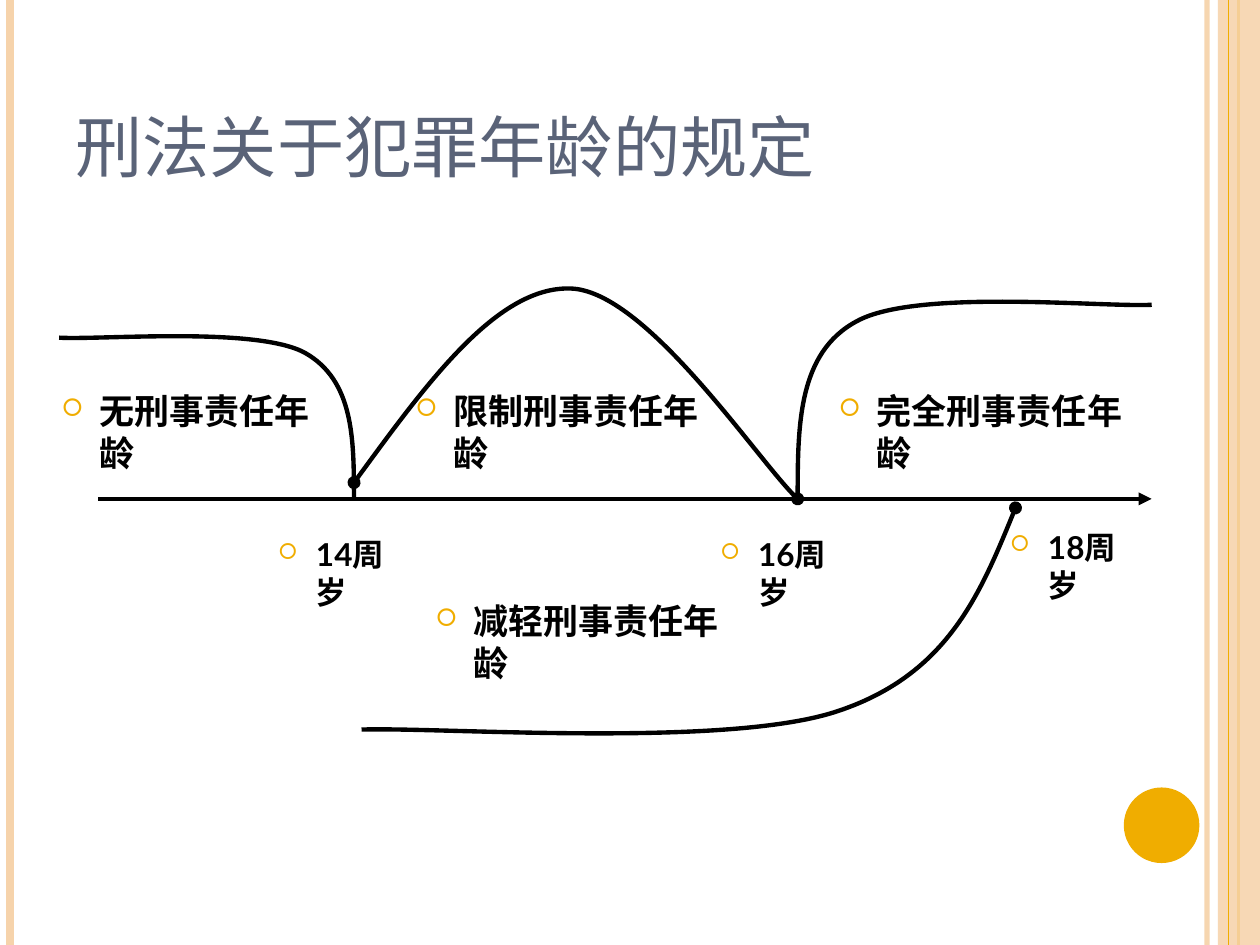
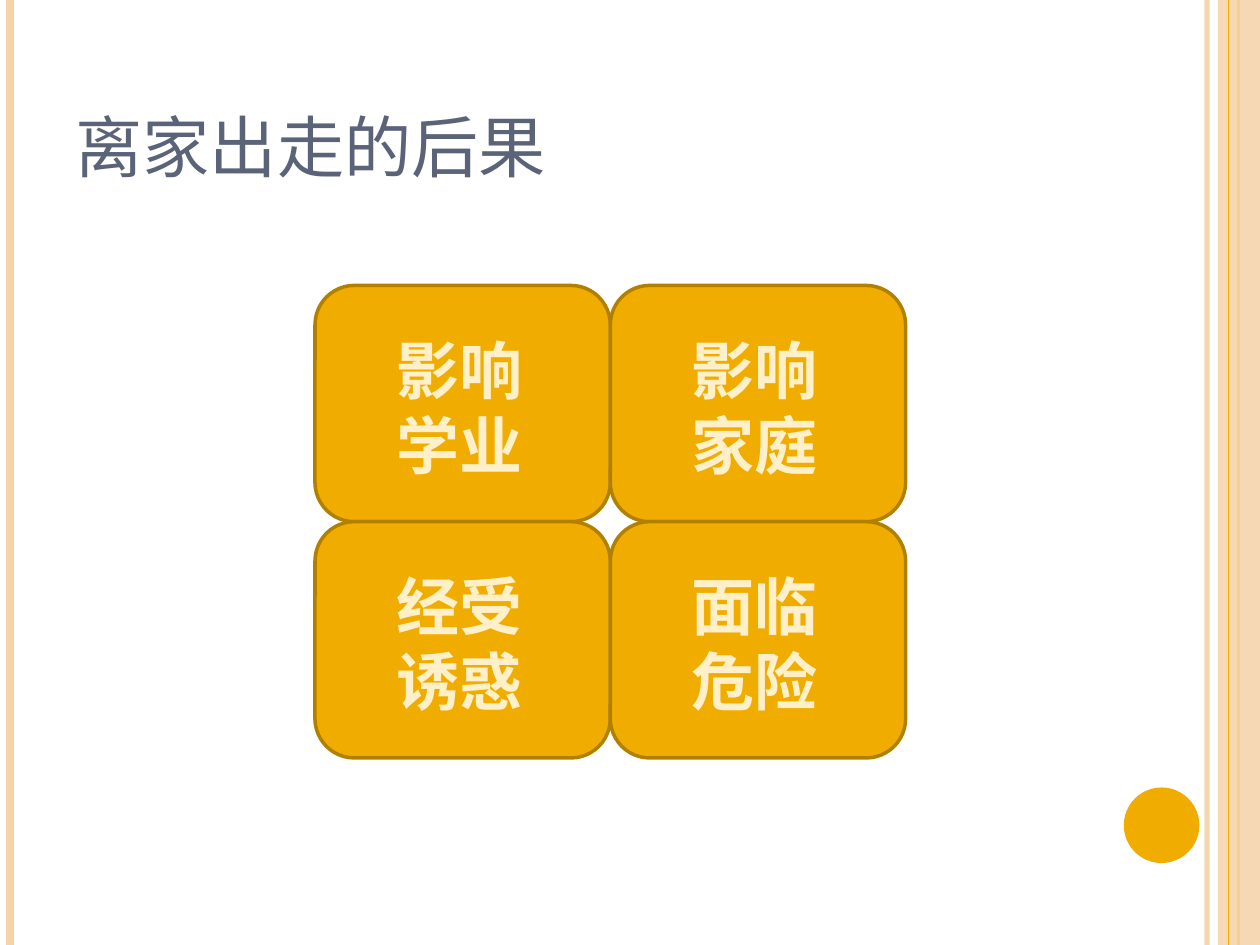
"""Build two law lesson slides: ages of criminal duty and the results of leaving home."""
from lxml import etree
from pptx import Presentation
from pptx import util as u
from pptx.dml.color import RGBColor
from pptx.enum import shapes, text
from pptx.oxml.ns import qn

PEACH = RGBColor(0xF6, 0xD3, 0xAB)
GOLD = RGBColor(0xF0, 0xAD, 0x00)
BROWN = RGBColor(0xB2, 0x80, 0x00)
CREAM = RGBColor(0xFF, 0xF0, 0xC9)
SLATE = RGBColor(0x5A, 0x63, 0x78)
BLACK = RGBColor(0, 0, 0)

LATIN = "Lato"
HEAD_FONT = "Noto Sans CJK JP"
CARD_FONT = "Noto Sans CJK SC"
WIDE, HIGH = 720, 540

RULES = [(689.8, PEACH, 3, 93), (5.8, PEACH, 4.5, 100), (707.8, GOLD, 1.5, 100)]

CURVES = [
    ([(580.3, 290.2), (560.9, 337.7), (541.4, 385.2), (479.5, 406.1),
      (416.9, 427.7), (252, 415.4), (206.6, 416.9)], "oval", None),
    ([(202.3, 285.1), (202.3, 251.3), (202.3, 217.4), (174.2, 201.6),
      (146.2, 186.5), (57.6, 194.4), (33.8, 193)], None, None),
    ([(455.8, 285.1), (455.8, 243.4), (455.8, 201.6), (489.6, 183.6),
      (523.4, 164.9), (630, 175.7), (658.1, 174.2)], None, None),
    ([(202.3, 275.8), (243.4, 219.6), (284.4, 163.4), (326.2, 164.9),
      (368.6, 166.3), (434.2, 265), (455.8, 285.1)], "oval", "oval"),
]

LABELS = [
    ("14周岁", 151.9, 302.4, 84.2, 18),
    ("16周岁", 404.6, 302.4, 84.2, 18),
    ("18周岁", 570.2, 298.1, 79.2, 18),
    ("无刑事责任年龄", 28.1, 218.9, 157.7, 20),
    ("完全刑事责任年龄", 472.3, 218.9, 185.8, 20),
    ("限制刑事责任年龄", 230.4, 218.9, 185.8, 20),
    ("减轻刑事责任年龄", 241.9, 339.1, 185.8, 20),
]

CARDS = [[["影响学业"], ["影响", "家庭"]],
         [["经受诱惑"], ["面临", "危险"]]]


def add_node(base, tag, **attrs):
    return etree.SubElement(base, qn(tag), attrs)


def fade(part, share):
    if share < 100:
        color = next(part.iter(qn("a:srgbClr")))
        add_node(color, "a:alpha", val=str(share * 1000))


def add_ends(line, head, tail):
    for tag, kind in (("a:headEnd", head), ("a:tailEnd", tail)):
        if kind:
            add_node(line._get_or_add_ln(), tag, type=kind)


def add_line(slide, start, end, color, width, share=100, tail=None):
    rule = slide.shapes.add_connector(
        shapes.MSO_CONNECTOR.STRAIGHT, *map(u.Pt, (*start, *end)))
    rule.line.color.rgb = color
    rule.line.width = u.Pt(width)
    fade(rule._element.spPr, share)
    add_ends(rule.line, None, tail)
    add_node(rule._element.spPr, "a:effectLst")


def add_shape(slide, kind, box, fill, edge=None, share=100):
    shape = slide.shapes.add_shape(kind, *map(u.Pt, box))
    shape.shadow.inherit = False
    shape.fill.solid()
    shape.fill.fore_color.rgb = fill
    fade(shape._element.spPr, share)
    if edge:
        shape.line.color.rgb = edge
        shape.line.width = u.Pt(2)
    else:
        shape.line.fill.background()


def add_curve(slide, points, head, tail):
    start, *rest = [tuple(map(u.Pt, point)) for point in points]
    form = slide.shapes.build_freeform(*start)
    form.add_line_segments(rest, close=False)
    curve = form.convert_to_shape()
    curve.shadow.inherit = False
    curve.fill.background()
    curve.line.color.rgb = BLACK
    curve.line.width = u.Pt(2.5)
    add_ends(curve.line, head, tail)
    track = next(curve._element.iter(qn("a:path")))
    legs = track.findall(qn("a:lnTo"))
    for first in range(0, len(legs), 3):
        bend = add_node(track, "a:cubicBezTo")
        for leg in legs[first:first + 3]:
            bend.append(leg[0])
            track.remove(leg)


def add_text(slide, lines, box, size, font, color, bold=True):
    field = slide.shapes.add_textbox(*map(u.Pt, box))
    frame = field.text_frame
    frame.word_wrap = True
    for index, line in enumerate(lines):
        para = frame.add_paragraph() if index else frame.paragraphs[0]
        run = para.add_run()
        run.text = line
        run.font.size = u.Pt(size)
        run.font.bold = bold
        run.font.color.rgb = color
        run.font.name = font
        props = run._r.get_or_add_rPr()
        props.set("lang", "zh-CN")
        add_node(props, "a:ea", typeface=LATIN)
    return frame


def add_label(slide, words, left, top, width, size):
    frame = add_text(slide, [words], (left, top, width, 2 * size), size, LATIN, BLACK)
    frame.auto_size = text.MSO_AUTO_SIZE.SHAPE_TO_FIT_TEXT
    props = frame.paragraphs[0]._p.get_or_add_pPr()
    props.set("marL", str(u.Pt(21.6)))
    props.set("indent", str(-u.Pt(21.6)))
    tint = add_node(props, "a:buClr")
    add_node(tint, "a:srgbClr", val=str(GOLD))
    add_node(props, "a:buSzPct", val="70000")
    add_node(props, "a:buFont", typeface="Wingdings", pitchFamily="2", charset="2")
    add_node(props, "a:buChar", char="¡")


def add_page(deck, title):
    slide = deck.slides.add_slide(deck.slide_layouts[6])
    for left, color, width, share in RULES:
        add_line(slide, (left, 0), (left, HIGH), color, width, share)
    add_shape(slide, shapes.MSO_SHAPE.RECTANGLE, (696, 0, 24, HIGH), PEACH, share=87)
    add_line(slide, (702, 0), (702, HIGH), GOLD, 0.75)
    add_shape(slide, shapes.MSO_SHAPE.OVAL, (642.2, 450, 43.2, 43.2), GOLD)
    frame = add_text(slide, [title], (36, 21.6, 588, 90), 48, HEAD_FONT, SLATE, False)
    frame.vertical_anchor = text.MSO_ANCHOR.BOTTOM
    frame.paragraphs[0].runs[0]._r.rPr.set("cap", "small")
    return slide


def add_ages(deck):
    slide = add_page(deck, "刑法关于犯罪年龄的规定")
    add_line(slide, (56.2, 285.1), (658.1, 285.1), BLACK, 2.5, tail="triangle")
    for curve in CURVES:
        add_curve(slide, *curve)
    for label in LABELS:
        add_label(slide, *label)


def add_risks(deck):
    slide = add_page(deck, "离家出走的后果")
    width, height = 168.75, 135
    spots = [(180 + col * width, 163.1 + row * height, lines)
             for row, cards in enumerate(CARDS) for col, lines in enumerate(cards)]
    for left, top, _ in spots:
        add_shape(slide, shapes.MSO_SHAPE.FLOWCHART_ALTERNATE_PROCESS,
                  (left, top, width, height), GOLD, BROWN)
    for left, top, lines in spots:
        frame = add_text(slide, lines, (left + 39.6, top + 22.5, 95.8, 94.3),
                         36, CARD_FONT, CREAM)
        frame.auto_size = text.MSO_AUTO_SIZE.SHAPE_TO_FIT_TEXT


def main():
    deck = Presentation()
    deck.slide_width, deck.slide_height = u.Pt(WIDE), u.Pt(HIGH)
    add_ages(deck)
    add_risks(deck)
    deck.save("out.pptx")


if __name__ == "__main__":
    main()
